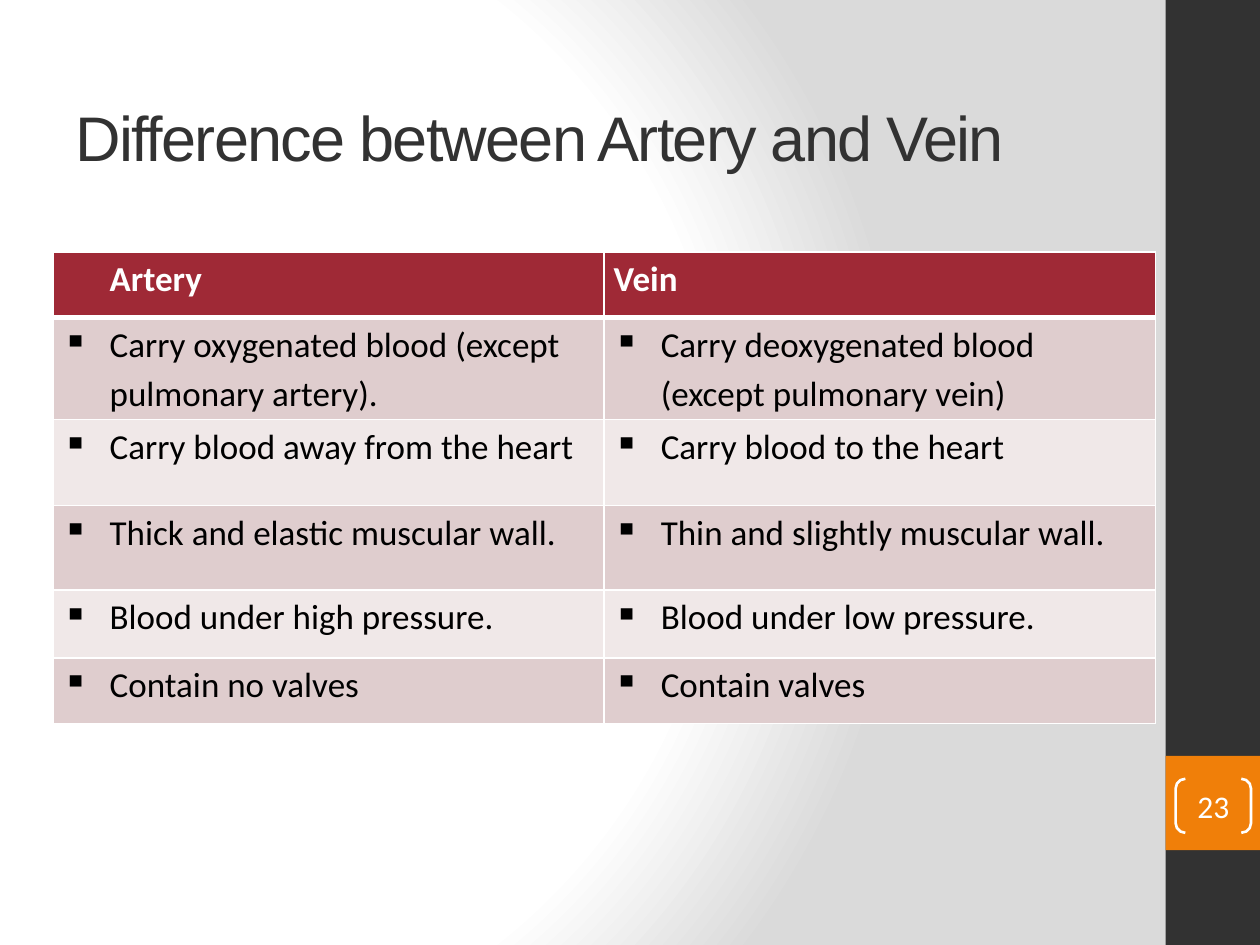
from dataclasses import dataclass

from pptx import Presentation
from pptx import oxml
from pptx import util as u
from pptx.dml.color import RGBColor
from pptx.enum import shapes, text
from pptx.oxml.ns import nsdecls


@dataclass(frozen=True)
class Theme:
    dark: str = "323232"
    orange: str = "F07F09"
    red: str = "9F2936"
    bands: tuple = ("DFCDCE", "F0E8E8")
    white: str = "FFFFFF"
    black: str = "000000"
    grey: str = "DADADA"
    head_font: str = "Arial"
    body_font: str = "Calibri"
    title_size: int = 36
    table_size: int = 20
    number_size: int = 18


T = Theme()
HEADERS = ("Artery", "Vein")
ROWS = (
    ("Carry oxygenated blood (except pulmonary artery).",
     "Carry deoxygenated blood (except pulmonary vein)"),
    ("Carry blood away from the heart", "Carry blood to the heart"),
    ("Thick and elastic muscular wall.", "Thin and slightly muscular wall."),
    ("Blood under high pressure.", "Blood under low pressure."),
    ("Contain no valves", "Contain valves"),
)
ROW_HEIGHTS = (1.32, 2.06, 1.73, 1.7, 1.37, 1.32)
COL_WIDTH = 11.11
INDENT = u.Cm(0.95)


def xml(source):
    return oxml.parse_xml(source.replace(">", f" {nsdecls('a', 'p')}>", 1))


def box(left, top, width, height):
    return [u.Cm(v) for v in (left, top, width, height)]


def write(tf, words, *, size, color, font=T.body_font, bold=False,
          align=None, line=None, tracking=None):
    """Put one formatted paragraph into a text frame and return it."""
    p = tf.paragraphs[0]
    p.alignment = align
    p.line_spacing = line
    r = p.add_run()
    r.text = words
    r.font.size, r.font.name, r.font.bold = u.Pt(size), font, bold
    r.font.color.rgb = RGBColor.from_string(color)
    if tracking is not None:
        r.font._element.set("spc", str(tracking * 100))
    return p


def indent(p, bullet=None):
    """Indent a paragraph, hanging from a bullet when one is given."""
    pPr = p._p.get_or_add_pPr()
    pPr.set("marL", str(INDENT))
    pPr.set("indent", str(-INDENT if bullet else 0))
    if bullet:
        pPr.append(xml(f'<a:buChar char="{bullet}"/>'.replace("/>", "></a:buChar>")))


def add_background(s):
    stops = "".join(
        f'<a:gs pos="{pos * 1000}"><a:srgbClr val="{c}"/></a:gs>'
        for pos, c in ((0, T.white), (75, T.white), (100, T.grey)))
    s.element.cSld.insert(0, xml(
        f'<p:bg><p:bgPr><a:gradFill rotWithShape="1"><a:gsLst>{stops}</a:gsLst>'
        '<a:path path="circle"><a:fillToRect l="20000" t="50000" r="100000"'
        ' b="50000"/></a:path></a:gradFill><a:effectLst/></p:bgPr></p:bg>'))


def add_block(s, place, color):
    sp = s.shapes.add_shape(shapes.MSO_SHAPE.RECTANGLE, *box(*place))
    sp.shadow.inherit = False
    sp.fill.solid()
    sp.fill.fore_color.rgb = RGBColor.from_string(color)
    sp.line.fill.background()


def add_title(s, words):
    tf = s.shapes.add_textbox(*box(1.27, 1.7, 23.29, 2.11)).text_frame
    tf.word_wrap = True
    tf.vertical_anchor = text.MSO_ANCHOR.MIDDLE
    write(tf, words, size=T.title_size, color=T.dark, font=T.head_font,
          tracking=-1)


def add_page_number(s, number):
    sp = s.shapes.add_shape(shapes.MSO_SHAPE.DOUBLE_BRACKET,
                            *box(23.7, 15.7, 1.52, 1.09))
    sp.adjustments[0] = 0.18
    sp.shadow.inherit = False
    sp.fill.background()
    sp.line.color.rgb = RGBColor.from_string(T.white)
    sp.line.width = u.Pt(1.5)
    tf = sp.text_frame
    tf.margin_left = tf.margin_right = tf.margin_top = tf.margin_bottom = 0
    tf.vertical_anchor = text.MSO_ANCHOR.MIDDLE
    write(tf, number, size=T.number_size, color=T.white,
          align=text.PP_ALIGN.CENTER)


def style_cell(cell, fill, bottom=1):
    cell.margin_left = cell.margin_right = u.Cm(0.19)
    cell.margin_top = cell.margin_bottom = 0
    cell.fill.solid()
    cell.fill.fore_color.rgb = RGBColor.from_string(fill)
    tcPr = cell._tc.get_or_add_tcPr()
    # Borders come before the fill
    for i, (side, width) in enumerate(zip("LRTB", (1, 1, 1, bottom))):
        tcPr.insert(i, xml(
            f'<a:ln{side} w="{u.Pt(width)}"><a:solidFill>'
            f'<a:srgbClr val="{T.white}"/></a:solidFill></a:ln{side}>'))


def add_comparison(s):
    place = box(1.07, 5.08, COL_WIDTH * len(HEADERS), sum(ROW_HEIGHTS))
    table = s.shapes.add_table(len(ROW_HEIGHTS), len(HEADERS), *place).table
    table.horz_banding = False
    for col in table.columns:
        col.width = u.Cm(COL_WIDTH)
    for row, height in zip(table.rows, ROW_HEIGHTS):
        row.height = u.Cm(height)

    # Header row
    for c, words in enumerate(HEADERS):
        cell = table.cell(0, c)
        style_cell(cell, T.red, bottom=3)
        p = write(cell.text_frame, words, size=T.table_size, color=T.white,
                  bold=True, line=1.15)
        if c == 0:
            indent(p)

    # Banded rows with bullets
    for i, pair in enumerate(ROWS):
        for c, words in enumerate(pair):
            cell = table.cell(i + 1, c)
            style_cell(cell, T.bands[i % 2])
            p = write(cell.text_frame, words, size=T.table_size,
                      color=T.black, line=1.15)
            indent(p, "▪")


def main():
    prs = Presentation()
    prs.slide_width, prs.slide_height = u.Cm(25.4), u.Cm(19.05)
    s = prs.slides.add_slide(prs.slide_layouts[6])

    # Backdrop and side band
    add_background(s)
    add_block(s, (23.5, 0, 1.9, 19.05), T.dark)
    add_block(s, (23.5, 15.24, 1.9, 1.9), T.orange)

    # Content
    add_title(s, "Difference between Artery and Vein")
    add_comparison(s)
    add_page_number(s, "23")
    prs.save("out.pptx")


if __name__ == "__main__":
    main()
